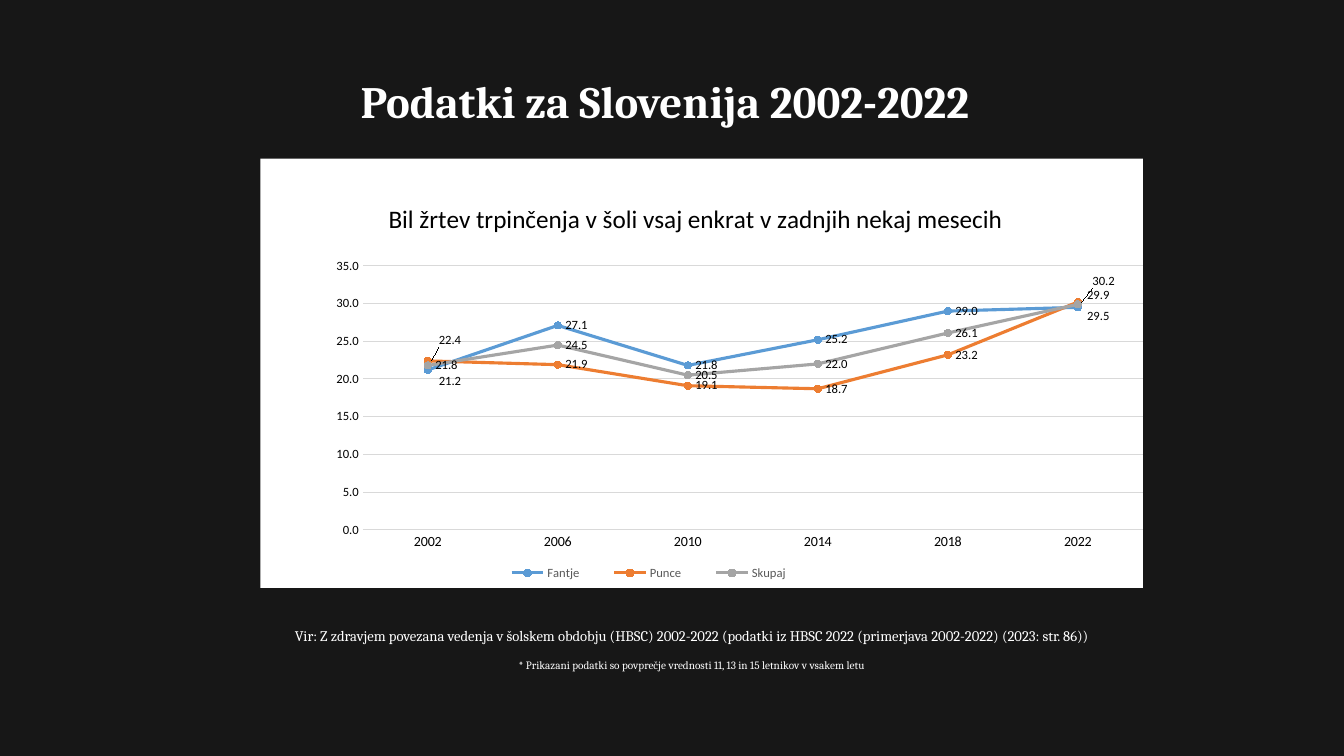
from dataclasses import dataclass

from lxml import etree
from pptx import Presentation
from pptx import util as u
from pptx.chart.data import CategoryChartData
from pptx.dml.color import RGBColor
from pptx.enum import chart as ce, text
from pptx.oxml import parse_xml
from pptx.oxml.ns import nsdecls, qn


@dataclass(frozen=True)
class Theme:
    back: str = "171717"
    light: str = "FFFFFF"
    dark: str = "000000"
    grid: str = "D9D9D9"
    muted: str = "595959"
    serif: str = "Cambria"
    sans: str = "Calibri"
    title: float = 32
    heading: float = 18
    source: float = 10.5
    axis: float = 10
    label: float = 9
    note: float = 8


YEARS = ["2002", "2006", "2010", "2014", "2018", "2022"]
SERIES = [
    ("Fantje", "5B9BD5", [21.2, 27.1, 21.8, 25.2, 29.0, 29.5], {0: (0.004, 0.026), 5: (0.002, 0.02)}),
    ("Punce", "ED7D31", [22.4, 21.9, 19.1, 18.7, 23.2, 30.2], {0: (0.004, -0.049), 5: (0.008, -0.049)}),
    ("Skupaj", "A5A5A5", [21.8, 24.5, 20.5, 22.0, 26.1, 29.9], {5: (0.002, -0.02)}),
]


def assign(obj, **values):
    for name, value in values.items():
        setattr(obj, name, value)


class Deck:
    """Draws styled elements on the current slide, with lengths in px."""

    def __init__(self, theme, width, height):
        self.theme = theme
        self.prs = Presentation()
        assign(self.prs, slide_width=self.px(width), slide_height=self.px(height))

    def px(self, n):
        return u.Emu(n * 9525)

    def box(self, *lengths):
        return [self.px(n) for n in lengths]

    def add_slide(self):
        self.s = self.prs.slides.add_slide(self.prs.slide_layouts[6])
        self.fill(self.s.background.fill, self.theme.back)

    def fill(self, fill, color):
        fill.solid()
        fill.fore_color.rgb = RGBColor.from_string(color)

    def line(self, line, color, width):
        self.fill(line.fill, color)
        line.width = u.Pt(width)

    def font(self, font, size, color, name, bold=False):
        assign(font, size=u.Pt(size), name=name, bold=bold)
        font.color.rgb = RGBColor.from_string(color)

    def text(self, lengths, lines, align, bold=False, spacing=1.0, gap=0):
        tf = self.s.shapes.add_textbox(*self.box(*lengths)).text_frame
        assign(tf, word_wrap=True, vertical_anchor=text.MSO_ANCHOR.MIDDLE)
        for i, (words, size) in enumerate(lines):
            p = tf.add_paragraph() if i else tf.paragraphs[0]
            assign(p, alignment=align, line_spacing=spacing)
            if i:
                p.space_before = u.Pt(gap)
            r = p.add_run()
            r.text = words
            self.font(r.font, size, self.theme.light, self.theme.serif, bold)

    def layout(self, parent, index, **values):
        old = parent.find(qn("c:layout"))
        if old is not None:
            parent.remove(old)
        layout = parse_xml(f"<c:layout {nsdecls('c')}/>")
        manual = etree.SubElement(layout, qn("c:manualLayout"))
        for name, value in values.items():
            etree.SubElement(manual, qn(f"c:{name}")).set("val", str(value))
        parent.insert(index, layout)

    def line_chart(self, lengths, heading):
        t = self.theme
        data = CategoryChartData(number_format="0.0")
        data.categories = YEARS
        for name, _, values, _ in SERIES:
            data.add_series(name, values)
        frame = self.s.shapes.add_chart(ce.XL_CHART_TYPE.LINE_MARKERS, *self.box(*lengths), data)
        chart = frame.chart
        self.font(chart.font, t.axis, t.dark, t.sans)
        root = chart.element.find(qn("c:chart"))
        root.addnext(parse_xml(
            f"<c:spPr {nsdecls('c', 'a')}><a:solidFill><a:srgbClr val='{t.light}'/></a:solidFill>"
            "<a:ln><a:noFill/></a:ln></c:spPr>"))

        title = chart.chart_title.text_frame
        title.text = heading
        self.font(title.paragraphs[0].runs[0].font, t.heading, t.dark, t.sans)
        assign(chart, has_legend=True)
        assign(chart.legend, position=ce.XL_LEGEND_POSITION.BOTTOM, include_in_layout=False)
        self.font(chart.legend.font, t.label, t.muted, t.sans)

        for axis, size in ((chart.category_axis, t.axis), (chart.value_axis, t.label)):
            assign(axis, major_tick_mark=ce.XL_TICK_MARK.NONE, minor_tick_mark=ce.XL_TICK_MARK.NONE)
            self.font(axis.tick_labels.font, size, t.dark, t.sans)
        self.line(chart.category_axis.format.line, t.grid, 0.75)
        values = chart.value_axis
        assign(values, minimum_scale=0, maximum_scale=35, major_unit=5, has_major_gridlines=True)
        assign(values.tick_labels, number_format="0.0", number_format_is_linked=False)
        values.format.line.fill.background()
        self.line(values.major_gridlines.format.line, t.grid, 0.75)

        for ser, (_, color, _, moved) in zip(chart.plots[0].series, SERIES):
            self.line(ser.format.line, color, 2.25)
            assign(ser, smooth=False)
            assign(ser.marker, style=ce.XL_MARKER_STYLE.CIRCLE, size=5)
            self.fill(ser.marker.format.fill, color)
            self.line(ser.marker.format.line, color, 0.75)
            labels = ser.data_labels
            assign(labels, show_value=True, number_format="0.0", number_format_is_linked=False,
                   position=ce.XL_LABEL_POSITION.RIGHT)
            self.font(labels.font, t.label, t.dark, t.sans)
            for i in moved:
                label = ser.points[i].data_label
                self.font(label.font, t.label, t.dark, t.sans)
                label.position = ce.XL_LABEL_POSITION.RIGHT

        offsets = [xy for *_, moved in SERIES for xy in moved.values()]
        for label, (x, y) in zip(root.iter(qn("c:dLbl")), offsets):
            self.layout(label, 1, x=x, y=y)
        self.layout(root.find(qn("c:title")), 1, xMode="edge", yMode="edge", x=0.14, y=0.09)
        self.layout(root.find(qn("c:plotArea")), 0, layoutTarget="inner", xMode="edge", yMode="edge",
                    x=0.116, y=0.25, w=0.884, h=0.615)
        self.layout(root.find(qn("c:legend")), 1, xMode="edge", yMode="edge",
                    x=0.25, y=0.93, w=0.38, h=0.08)


def main():
    theme = Theme()
    deck = Deck(theme, 1280, 720)
    deck.add_slide()
    deck.line_chart((248, 151, 841, 409), "Bil žrtev trpinčenja v šoli vsaj enkrat v zadnjih nekaj mesecih")
    deck.text((206, 590, 906, 56), [
        ("Vir: Z zdravjem povezana vedenja v šolskem obdobju (HBSC) 2002-2022 "
         "(podatki iz HBSC 2022 (primerjava 2002-2022) (2023: str. 86))", theme.source),
        ("* Prikazani podatki so povprečje vrednosti 11, 13 in 15 letnikov v vsakem letu", theme.note),
    ], text.PP_ALIGN.CENTER, gap=10)
    deck.text((334, 30, 900, 139), [("Podatki za Slovenija 2002-2022", theme.title)],
              text.PP_ALIGN.LEFT, bold=True, spacing=0.9)
    deck.prs.save("out.pptx")


if __name__ == "__main__":
    main()
